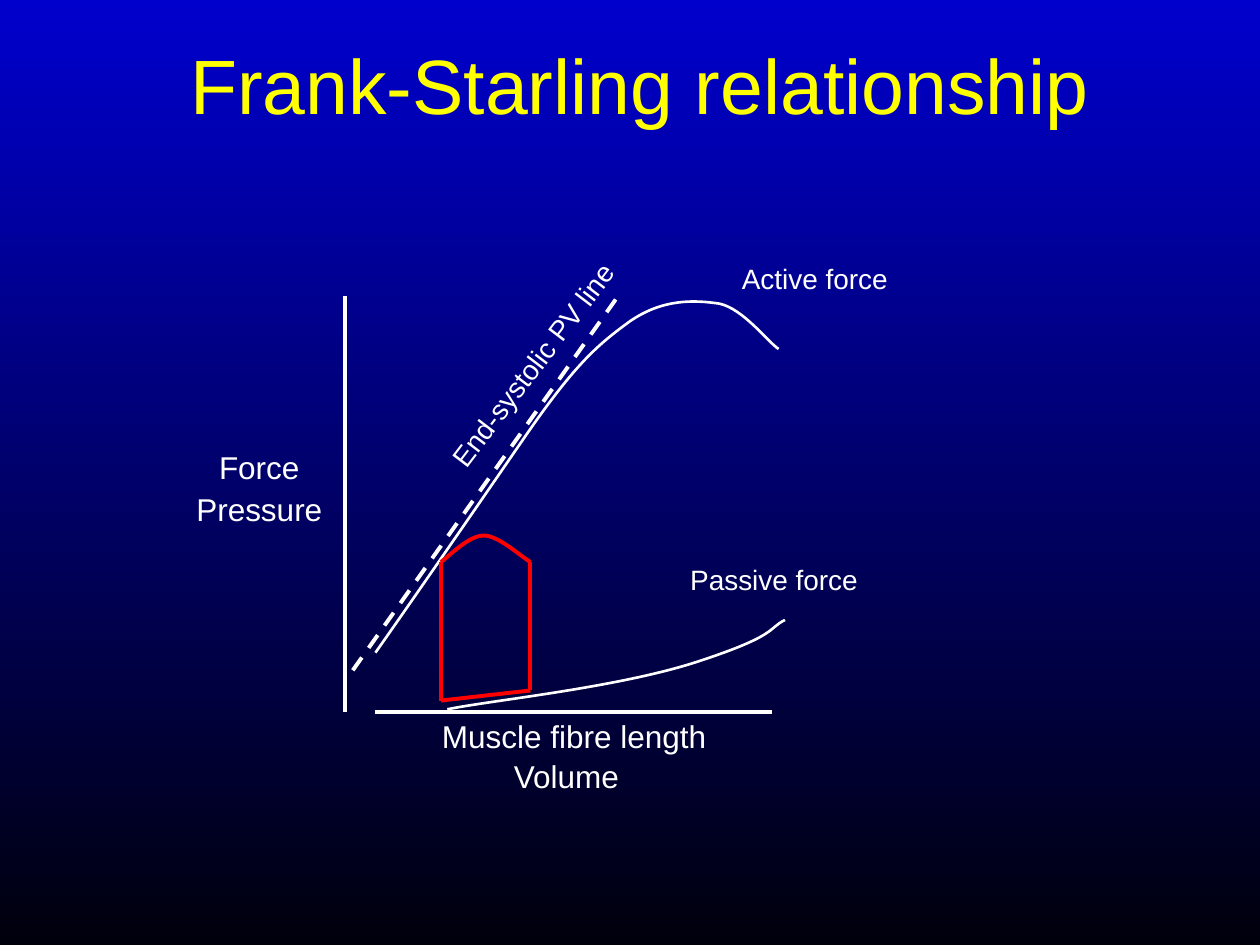
"""Build the Frank-Starling relationship slide."""
from lxml.etree import SubElement
from pptx import Presentation
from pptx.dml.color import RGBColor
from pptx.enum.dml import MSO_LINE
from pptx.enum.shapes import MSO_CONNECTOR
from pptx.enum.text import MSO_ANCHOR, PP_ALIGN
from pptx.oxml.ns import qn
from pptx.util import Inches, Pt

WHITE = RGBColor(0xFF, 0xFF, 0xFF)
YELLOW = RGBColor(0xFF, 0xFF, 0x00)
RED = RGBColor(0xFF, 0x00, 0x00)
BLUE = RGBColor(0x00, 0x00, 0xCC)
NAVY = RGBColor(0x00, 0x00, 0x0C)


class Pen:
    font = "Arial"
    thick = 2.25
    thin = 1.5

    def __init__(self, slide):
        self.slide = slide
        self.shapes = slide.shapes

    def back(self, top, base):
        fill = self.slide.background.fill
        fill.gradient()
        fill.gradient_angle = 270
        for stop, color in zip(fill.gradient_stops, (top, base)):
            stop.color.rgb = color

    def group(self):
        pen = Pen(self.slide)
        pen.shapes = self.shapes.add_group_shape().shapes
        return pen

    def text(self, words, left, top, width, height, size=18, color=WHITE,
             align=PP_ALIGN.LEFT, wrap=False, turn=0):
        box = self.shapes.add_textbox(*map(Inches, (left, top, width, height)))
        box.rotation = turn
        frame = box.text_frame
        frame.word_wrap = wrap
        frame.vertical_anchor = MSO_ANCHOR.MIDDLE
        frame.text = words
        line = frame.paragraphs[0]
        line.alignment = align
        font = line.runs[0].font
        font.name = self.font
        font.size = Pt(size)
        font.color.rgb = color

    def line(self, start, end, color=WHITE, dash=None):
        link = self.shapes.add_connector(
            MSO_CONNECTOR.STRAIGHT, *map(Inches, start + end))
        link.line.color.rgb = color
        link.line.width = Pt(self.thick)
        if dash:
            link.line.dash_style = dash
        SubElement(link.element.spPr, qn("a:effectLst"))

    def curve(self, points, width, color=WHITE):
        spots = [(Inches(x), Inches(y)) for x, y in points]
        draft = self.shapes.build_freeform(*spots[0])
        draft.add_line_segments(spots[1:], close=False)
        shape = draft.convert_to_shape()
        shape.shadow.inherit = False
        shape.fill.background()
        shape.line.color.rgb = color
        shape.line.width = Pt(width)
        track = next(shape.element.iter(qn("a:path")))
        legs = track.findall(qn("a:lnTo"))
        for first in range(0, len(legs), 3):
            bend = SubElement(track, qn("a:cubicBezTo"))
            for leg in legs[first:first + 3]:
                bend.append(leg[0])
                track.remove(leg)


def main():
    deck = Presentation()
    deck.slide_width, deck.slide_height = Inches(10), Inches(7.5)
    pen = Pen(deck.slides.add_slide(deck.slide_layouts[6]))
    pen.back(BLUE, NAVY)
    pen.text("Frank-Starling relationship", 0.83, 0.25, 8.5, 0.83,
             size=44, color=YELLOW, align=PP_ALIGN.CENTER, wrap=True)

    pen.line((2.74, 2.35), (2.74, 5.65))
    pen.line((2.98, 5.65), (6.13, 5.65))
    pen.text("Force", 1.64, 3.51, 0.84, 0.4)
    pen.text("Pressure", 1.46, 3.84, 1.26, 0.4)
    pen.text("Muscle fibre length", 3.41, 5.64, 2.3, 0.4)
    pen.text("Volume", 3.98, 5.96, 1.65, 0.4)

    active = [(6.18, 2.77), (6.1, 2.72), (5.9, 2.45), (5.71, 2.41),
              (5.51, 2.38), (5.26, 2.37), (5, 2.55), (4.74, 2.74),
              (4.56, 2.89), (4.13, 3.52), (3.69, 4.16), (3.22, 4.84),
              (2.98, 5.18)]
    passive = [(3.55, 5.63), (3.88, 5.56), (4.9, 5.46), (5.54, 5.25),
               (6.18, 5.04), (6.09, 4.99), (6.23, 4.92)]
    pen.curve(active, pen.thin)
    pen.curve(passive, pen.thin)
    pen.text("Active force", 5.79, 2.02, 1.36, 0.37, size=16)
    pen.text("Passive force", 5.38, 4.41, 1.53, 0.37, size=16)

    loop = pen.group()
    sides = [(4.21, 4.46), (4.21, 5.48), (3.5, 5.56), (3.5, 4.46)]
    for start, end in zip(sides, sides[1:]):
        loop.line(start, end, RED)
    crown = [sides[0], (4.15, 4.43), (3.96, 4.25), (3.84, 4.25),
             (3.72, 4.25), (3.57, 4.41), sides[-1]]
    loop.curve(crown, loop.thick, RED)

    slope = pen.group()
    slope.line((2.8, 5.32), (4.92, 2.33), dash=MSO_LINE.DASH)
    slope.text("End-systolic PV line", 3.12, 2.66, 2.28, 0.37,
               size=16, wrap=True, turn=307.2)
    deck.save("out.pptx")


if __name__ == "__main__":
    main()
